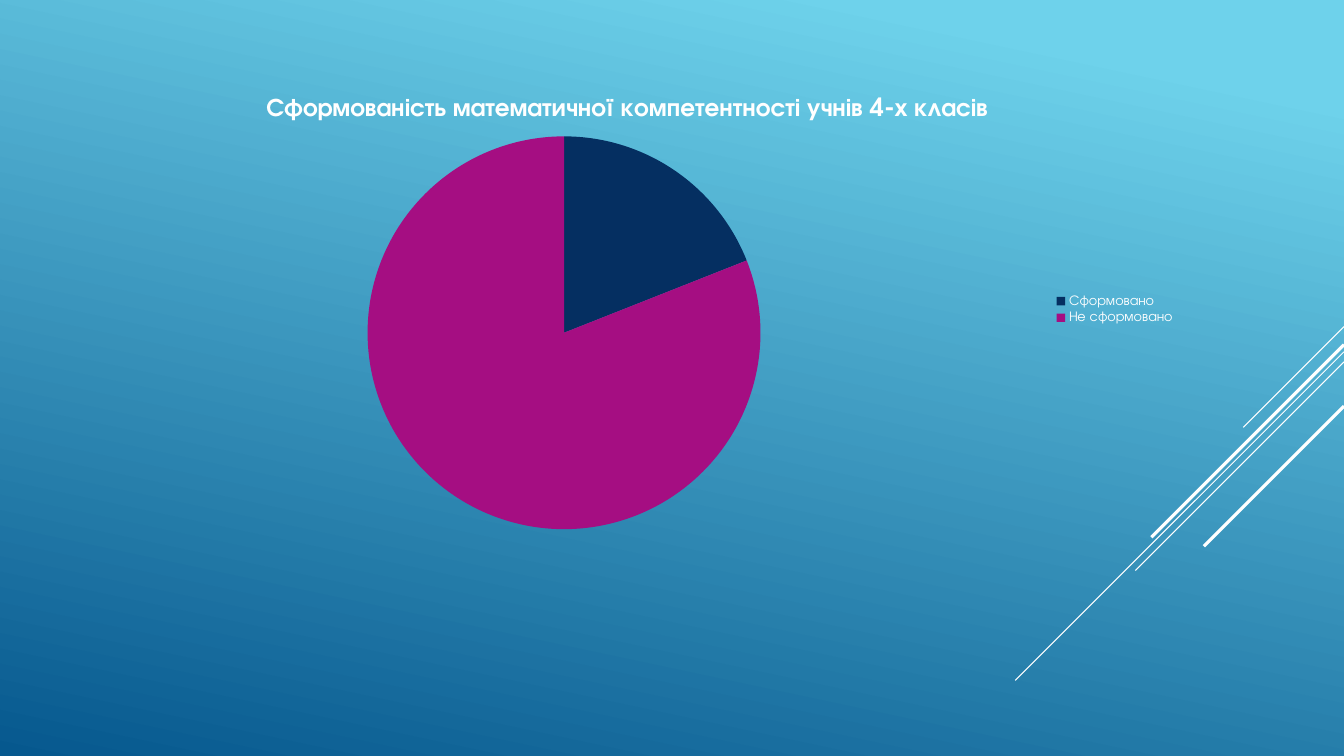
from lxml import etree
from pptx import Presentation
from pptx.chart.data import CategoryChartData
from pptx.dml.color import RGBColor
from pptx.enum.chart import XL_CHART_TYPE as ChartType, XL_LEGEND_POSITION as LegendPos
from pptx.enum.shapes import MSO_CONNECTOR as Connector
from pptx.oxml import parse_xml
from pptx.oxml.ns import nsdecls, qn
from pptx.util import Inches, Pt

FONT = "TeX Gyre Adventor"
WHITE, NAVY, MAGENTA = "FFFFFF", "052F61", "A50E82"
SLIDE_W, SLIDE_H = 13.33, 7.5
# Top of each diagonal on the right edge, its run to the left, its width
STRIPES = [(3.24, 1, 0.75), (3.49, 3.26, 0.75), (3.59, 2.07, 0.75),
           (3.42, 1.91, 2.25), (4.03, 1.39, 2.25)]
SHARES = {"Сформовано": 19, "Не сформовано": 81}


def rgb(color):
    return RGBColor.from_string(color)


def format_font(font, size, bold=False, color=WHITE):
    font.name, font.size, font.bold = FONT, Pt(size), bold
    font.color.rgb = rgb(color)


def paint_background(slide):
    fill = slide.background.fill
    fill.gradient()
    fill.gradient_angle = 360 - 102
    stops = [(0.1, "6ED2EB"), (1, "06588E")]
    for stop, (position, color) in zip(fill.gradient_stops, stops):
        stop.position = position
        stop.color.rgb = rgb(color)


def add_stripes(slide, right):
    """Draw the 45-degree lines that run down and left from the right edge."""
    for top, run, width in STRIPES:
        line = slide.shapes.add_connector(
            Connector.STRAIGHT, Inches(right), Inches(top),
            Inches(right - run), Inches(top + run))
        line.line.color.rgb = rgb(WHITE)
        line.line.width = Pt(width)
        etree.SubElement(line._element.spPr, qn("a:effectLst"))


def place_plot(chart, **shares):
    """Fix the inner plot area at x, y, w, h as shares of the chart."""
    plot_area = chart._chartSpace.chart.plotArea
    for old in plot_area.findall(qn("c:layout")):
        plot_area.remove(old)
    values = "".join(f'<c:{k} val="{v}"/>' for k, v in shares.items())
    plot_area.insert(0, parse_xml(
        f'<c:layout {nsdecls("c")}><c:manualLayout>'
        '<c:layoutTarget val="inner"/><c:xMode val="edge"/>'
        f'<c:yMode val="edge"/>{values}</c:manualLayout></c:layout>'))


def add_pie(slide, left, top, width, height):
    data = CategoryChartData()
    data.categories = list(SHARES)
    data.add_series("Series 1", list(SHARES.values()))
    chart = slide.shapes.add_chart(
        ChartType.PIE, Inches(left), Inches(top), Inches(width),
        Inches(height), data).chart
    format_font(chart.font, 10)

    chart.has_title = True
    p = chart.chart_title.text_frame.paragraphs[0]
    r = p.add_run()
    r.text = "Сформованість математичної компетентності учнів 4-х класів "
    format_font(r.font, 18, bold=True)
    chart.chart_title.include_in_layout = False

    chart.has_legend = True
    chart.legend.position = LegendPos.RIGHT
    chart.legend.include_in_layout = False
    format_font(chart.legend.font, 10)

    plot = chart.plots[0]
    plot.vary_by_categories = True
    for i, color in enumerate((NAVY, MAGENTA)):
        part = plot.series[0].points[i].format
        part.fill.solid()
        part.fill.fore_color.rgb = rgb(color)
        part.line.fill.background()
    place_plot(chart, x=0.26, y=0.13, w=0.36, h=0.84)


def main():
    prs = Presentation()
    prs.slide_width, prs.slide_height = Inches(SLIDE_W), Inches(SLIDE_H)
    slide = prs.slides.add_slide(prs.slide_layouts[6])
    paint_background(slide)
    add_stripes(slide, SLIDE_W)
    add_pie(slide, 0.75, 0.75, 11.01, 4.64)
    prs.save("out.pptx")


if __name__ == "__main__":
    main()
